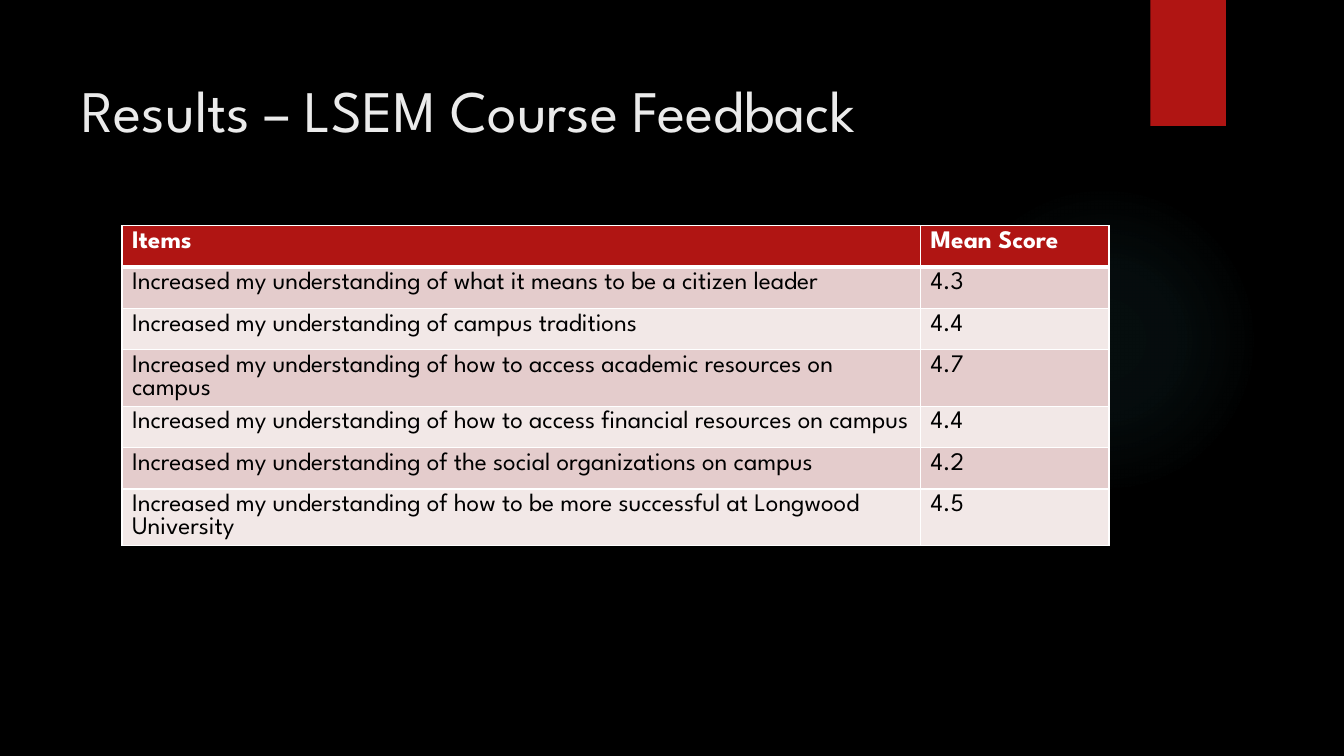
from pptx import Presentation
from pptx.dml.color import RGBColor
from pptx.enum.shapes import MSO_SHAPE
from pptx.enum.text import MSO_ANCHOR, PP_ALIGN
from pptx.oxml import parse_xml
from pptx.oxml.ns import nsdecls, qn
from pptx.util import Inches, Pt

OVAL, RECT = MSO_SHAPE.OVAL, MSO_SHAPE.RECTANGLE
TOP, LEFT = MSO_ANCHOR.TOP, PP_ALIGN.LEFT

TITLE = "Results – LSEM Course Feedback"
HEADER = ("Items", "Mean Score")
SCORES = [
    ("Increased my understanding of what it means to be a citizen leader", "4.3"),
    ("Increased my understanding of campus traditions", "4.4"),
    ("Increased my understanding of how to access academic resources on campus", "4.7"),
    ("Increased my understanding of how to access financial resources on campus", "4.4"),
    ("Increased my understanding of the social organizations on campus", "4.2"),
    ("Increased my understanding of how to be more successful at Longwood University", "4.5"),
]
COL_WIDTHS = (7.92, 1.87)
ROW_HEIGHT = 0.41
FONT = "League Spartan"
RED, WHITE, BLACK = "B01513", "FFFFFF", "000000"
BANDS = ("E4CCCC", "F2E8E7")
GLOW = "50B9C1"
GLOW_STOPS = ((0, 7), (36, 6), (69, 0))  # position and opacity, percent


def rgb(color):
    return RGBColor.from_string(color)


def style_text(paragraph, size, color, bold=False):
    paragraph.alignment = LEFT
    for r in paragraph.runs:
        r.font.name = FONT
        r.font.size = Pt(size)
        r.font.bold = bold
        r.font.color.rgb = rgb(color)


def add_plain_shape(s, kind, x, y, w, h):
    shape = s.shapes.add_shape(kind, Inches(x), Inches(y), Inches(w), Inches(h))
    shape.shadow.inherit = False
    shape.line.fill.background()
    return shape


def fill_glow(shape):
    """Fill the shape with a circular gradient that fades outwards."""
    stops = "".join(
        f'<a:gs pos="{pos * 1000}"><a:srgbClr val="{GLOW}">'
        f'<a:alpha val="{alpha * 1000}"/></a:srgbClr></a:gs>'
        for pos, alpha in GLOW_STOPS)
    gradient = parse_xml(
        f'<a:gradFill {nsdecls("a")} rotWithShape="1"><a:gsLst>{stops}</a:gsLst>'
        '<a:path path="circle"><a:fillToRect l="50000" t="50000" r="50000" b="50000"/>'
        '</a:path></a:gradFill>')
    shape.fill.background()
    spPr = shape.element.spPr
    spPr.replace(spPr.find(qn("a:noFill")), gradient)


def set_borders(cell, top, bottom):
    tcPr = cell._tc.get_or_add_tcPr()
    for side, width in (("L", 1), ("R", 1), ("T", top), ("B", bottom)):
        tcPr.append(parse_xml(
            f'<a:ln{side} {nsdecls("a")} w="{Pt(width)}"><a:solidFill>'
            f'<a:srgbClr val="{WHITE}"/></a:solidFill></a:ln{side}>'))


def add_score_table(s):
    rows = [HEADER] + SCORES
    table = s.shapes.add_table(
        len(rows), len(HEADER), Inches(1.21), Inches(2.24),
        Inches(sum(COL_WIDTHS)), Inches(ROW_HEIGHT * len(rows))).table
    for column, width in zip(table.columns, COL_WIDTHS):
        column.width = Inches(width)
    for i, texts in enumerate(rows):
        table.rows[i].height = Inches(ROW_HEIGHT)
        header = i == 0
        for j, text in enumerate(texts):
            cell = table.cell(i, j)
            set_borders(cell, 3 if i == 1 else 1, 3 if header else 1)
            cell.fill.solid()
            cell.fill.fore_color.rgb = rgb(RED if header else BANDS[(i - 1) % 2])
            cell.text_frame.text = text
            style_text(cell.text_frame.paragraphs[0], 18,
                       WHITE if header else BLACK, header)


def main():
    prs = Presentation()
    prs.slide_width, prs.slide_height = Inches(13.33), Inches(7.5)
    s = prs.slides.add_slide(prs.slide_layouts[5])
    s.background.fill.solid()
    s.background.fill.fore_color.rgb = rgb(BLACK)

    title = s.shapes.title
    title.left, title.top = Inches(0.71), Inches(0.5)
    title.width, title.height = Inches(10.29), Inches(1.53)
    tf = title.text_frame
    tf.text = TITLE
    tf.word_wrap = True
    tf.vertical_anchor = TOP
    tf.margin_top = Inches(0.23)
    style_text(tf.paragraphs[0], 42, "EBEBEB")

    glow = add_plain_shape(s, OVAL, 9.41, 1.83, 3.08, 3.08)
    fill_glow(glow)
    ribbon = add_plain_shape(s, RECT, 11.41, 0, 0.75, 1.25)
    ribbon.fill.solid()
    ribbon.fill.fore_color.rgb = rgb(RED)
    for decoration in (glow, ribbon):
        title.element.addprevious(decoration.element)

    add_score_table(s)
    prs.save("out.pptx")


if __name__ == "__main__":
    main()
